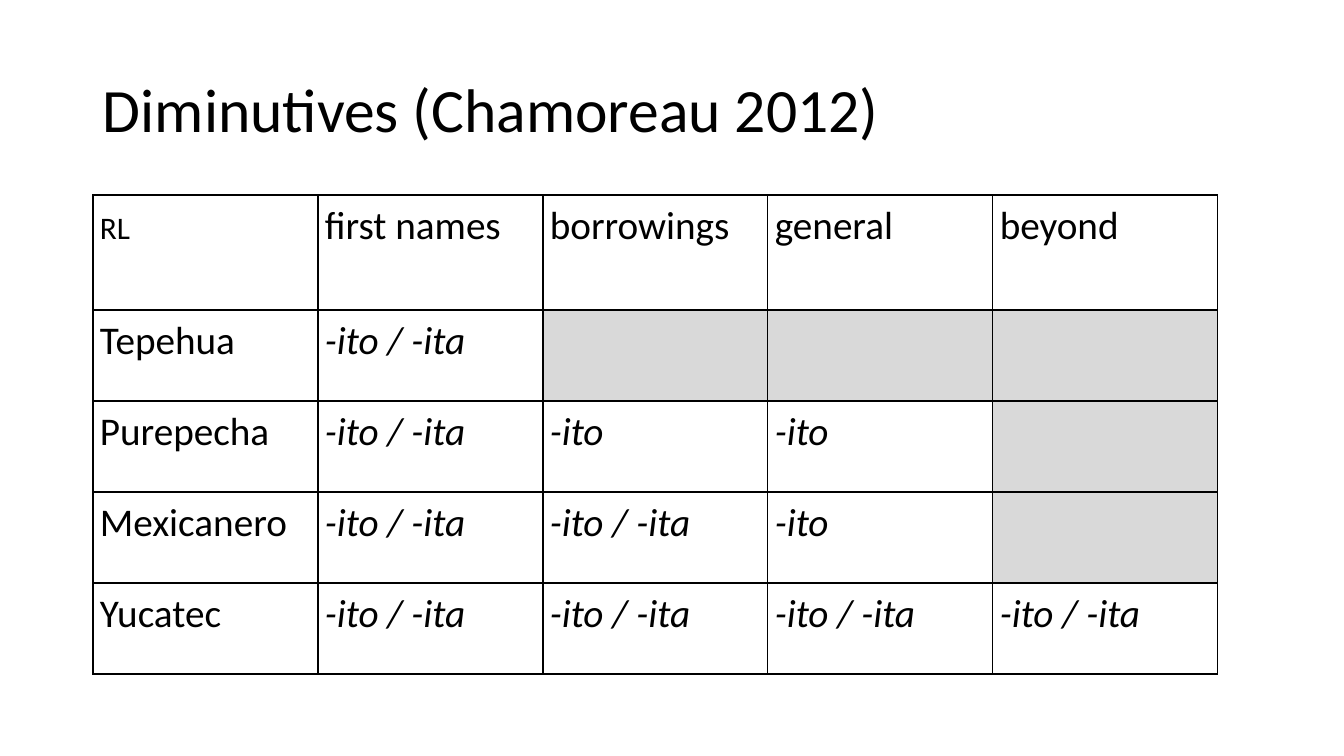
from dataclasses import dataclass

from lxml.etree import SubElement
from pptx import Presentation
from pptx.dml.color import RGBColor as RGB
from pptx.enum.text import MSO_ANCHOR as Anchor
from pptx.oxml.ns import qn
from pptx.util import Emu, Pt

EMU_PER_PX = 914400 / 100.8


@dataclass(frozen=True)
class Theme:
    font: str = "Calibri"
    ink: str = "000000"
    paper: str = "FFFFFF"
    unattested: str = "D9D9D9"
    title_size: int = 44
    cell_size: int = 28
    border_width: int = 1


THEME = Theme()
BOTH = "-ito / -ita"
MASC = "-ito"
HEADINGS = ["rl", "first names", "borrowings", "general", "beyond"]
LANGUAGES = [
    ["Tepehua", BOTH, "", "", ""],
    ["Purepecha", BOTH, MASC, MASC, ""],
    ["Mexicanero", BOTH, BOTH, MASC, ""],
    ["Yucatec", BOTH, BOTH, BOTH, BOTH],
]


def px(length):
    return Emu(round(length * EMU_PER_PX))


def write(frame, text, size, spacing, italic=False, small_caps=False):
    paragraph = frame.paragraphs[0]
    paragraph.line_spacing = spacing
    run = paragraph.add_run()
    run.text = text
    run.font.name = THEME.font
    run.font.size = Pt(size)
    run.font.italic = italic
    run.font.color.rgb = RGB.from_string(THEME.ink)
    if small_caps:
        run.font._element.set("cap", "small")


def add_title(slide, text):
    title = slide.shapes.add_textbox(px(93), px(40), px(1159), px(146))
    title.text_frame.word_wrap = True
    title.text_frame.vertical_anchor = Anchor.MIDDLE
    write(title.text_frame, text, THEME.title_size, 0.9)


def outline(cell):
    properties = cell._tc.get_or_add_tcPr()
    for side in ("a:lnL", "a:lnR", "a:lnT", "a:lnB"):
        border = SubElement(properties, qn(side), w=str(Pt(THEME.border_width)))
        fill = SubElement(border, qn("a:solidFill"))
        SubElement(fill, qn("a:srgbClr"), val=THEME.ink)


def fill_cell(cell, text, **style):
    cell.margin_left = cell.margin_right = px(7)
    cell.margin_top = cell.margin_bottom = 0
    outline(cell)
    cell.fill.solid()
    cell.fill.fore_color.rgb = RGB.from_string(
        THEME.paper if text else THEME.unattested)
    if text:
        write(cell.text_frame, text, THEME.cell_size, 1.15, **style)


def add_diminutives(slide, rows, column_width=225, heading_height=115, row_height=91):
    columns = len(rows[0])
    height = heading_height + row_height * (len(rows) - 1)
    table = slide.shapes.add_table(
        len(rows), columns, px(93), px(195),
        px(column_width * columns), px(height)).table
    table.first_row = table.horz_banding = False
    for column in table.columns:
        column.width = px(column_width)
    for r, texts in enumerate(rows):
        table.rows[r].height = px(row_height if r else heading_height)
        for c, text in enumerate(texts):
            fill_cell(table.cell(r, c), text,
                      italic=r > 0 and c > 0, small_caps=r == c == 0)


def main():
    deck = Presentation()
    deck.slide_width, deck.slide_height = px(1344), px(756)
    slide = deck.slides.add_slide(deck.slide_layouts[6])
    add_title(slide, "Diminutives (Chamoreau 2012)")
    add_diminutives(slide, [HEADINGS, *LANGUAGES])
    deck.save("out.pptx")


if __name__ == "__main__":
    main()
